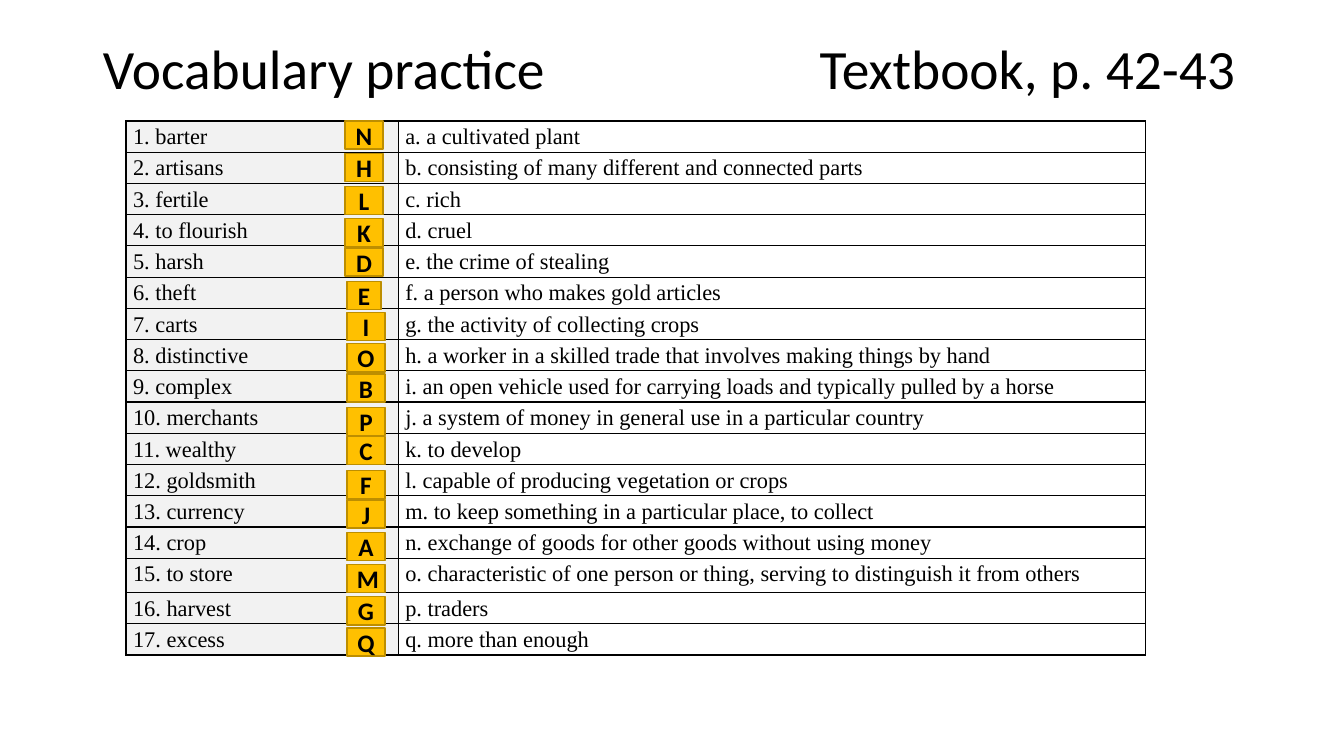
"""Build the vocabulary practice slide with its matching table and answer badges."""
from lxml.etree import SubElement
from pptx import Presentation
from pptx.dml.color import RGBColor
from pptx.enum.shapes import MSO_SHAPE as Shape
from pptx.enum.text import MSO_ANCHOR as Anchor, MSO_AUTO_SIZE as AutoSize, PP_ALIGN as Align
from pptx.oxml.ns import qn
from pptx.util import Pt

TITLE = "Vocabulary practice\tTextbook, p. 42-43"
ROWS = [
    ("1. barter", "a. a cultivated plant"),
    ("2. artisans", "b. consisting of many different and connected parts"),
    ("3. fertile", "c. rich "),
    ("4. to flourish", "d. cruel "),
    ("5. harsh ", "e. the crime of stealing"),
    ("6. theft", "f. a person who makes gold articles"),
    ("7. carts", "g. the activity of collecting crops"),
    ("8. distinctive", "h. a worker in a skilled trade that involves making things by hand"),
    ("9. complex", "i. an open vehicle used for carrying loads and typically pulled by a horse"),
    ("10. merchants", "j. a system of money in general use in a particular country"),
    ("11. wealthy", "k. to develop"),
    ("12. goldsmith", "l. capable of producing vegetation or crops"),
    ("13. currency", "m. to keep something in a particular place, to collect"),
    ("14. crop", "n. exchange of goods for other goods without using money"),
    ("15. to store", "o. characteristic of one person or thing, serving to distinguish it from others"),
    ("16. harvest", "p. traders"),
    ("17. excess", "q. more than enough "),
]
ANSWERS = [
    ("N", 120), ("H", 152), ("L", 185), ("K", 217), ("D", 246), ("E", 279),
    ("I", 310), ("O", 341), ("B", 371), ("P", 404), ("C", 433), ("F", 467),
    ("J", 496), ("A", 528), ("M", 560), ("G", 592), ("Q", 623),
]

BLACK = RGBColor(0x00, 0x00, 0x00)
GREY = RGBColor(0xF2, 0xF2, 0xF2)
GOLD = RGBColor(0xFF, 0xC0, 0x00)
DARK_GOLD = RGBColor(0xBD, 0x8E, 0x00)

EMU_PER_PX = 9144
COLUMNS = (270, 741)
ROW_HEIGHT, TALL_HEIGHT, TALL_ROW = 31, 34, 14
BADGE_WIDTH, NARROW_WIDTH, BADGE_HEIGHT = 38, 34, 28
BADGE_LEFT, BADGE_LEFT_LOWER, UPPER_COUNT = 342, 344, 5


def px(*lengths):
    return [length * EMU_PER_PX for length in lengths]


def write(para, text, size, font, bold=False):
    span = para.add_run()
    span.text = text
    span.font.size = Pt(size)
    span.font.name = font
    span.font.bold = bold
    span.font.color.rgb = BLACK


def add_title(page):
    title = page.shapes.title
    title.left, title.top, title.width, title.height = px(92, 40, 1150, 61)
    frame = title.text_frame
    frame.auto_size = AutoSize.NONE
    frame.vertical_anchor = Anchor.MIDDLE
    para = frame.paragraphs[0]
    para.alignment = Align.LEFT
    para.line_spacing = 0.9
    stops = SubElement(para._p.get_or_add_pPr(), qn("a:tabLst"))
    SubElement(stops, qn("a:tab"), pos=str(px(711)[0]), algn="l")
    write(para, TITLE, 39.6, "Calibri")


def add_borders(cell):
    properties = cell._tc.get_or_add_tcPr()
    for side in ("lnL", "lnR", "lnT", "lnB"):
        line = SubElement(properties, qn(f"a:{side}"), w=str(Pt(1)))
        fill = SubElement(line, qn("a:solidFill"))
        SubElement(fill, qn("a:srgbClr"), val=str(BLACK))


def add_vocabulary(page):
    height = ROW_HEIGHT * (len(ROWS) - 1) + TALL_HEIGHT
    area = px(125, 120, sum(COLUMNS), height)
    table = page.shapes.add_table(len(ROWS), len(COLUMNS), *area).table
    table.first_row = table.horz_banding = False
    for column, width in zip(table.columns, px(*COLUMNS)):
        column.width = width
    for index, texts in enumerate(ROWS):
        table.rows[index].height = px(TALL_HEIGHT if index == TALL_ROW else ROW_HEIGHT)[0]
        for cell, text in zip(table.rows[index].cells, texts):
            cell.margin_left, cell.margin_right, cell.margin_top, cell.margin_bottom = px(7, 7, 0, 0)
            add_borders(cell)
            if text == texts[0]:
                cell.fill.solid()
                cell.fill.fore_color.rgb = GREY
            else:
                cell.fill.background()
            para = cell.text_frame.paragraphs[0]
            para.alignment = Align.JUSTIFY
            para.line_spacing = 1.15
            write(para, text, 16, "Times New Roman")


def add_badges(page):
    for index, (letter, top) in enumerate(ANSWERS):
        left = BADGE_LEFT if index < UPPER_COUNT else BADGE_LEFT_LOWER
        width = NARROW_WIDTH if letter == "E" else BADGE_WIDTH
        box = page.shapes.add_shape(Shape.RECTANGLE, *px(left, top, width, BADGE_HEIGHT))
        box.shadow.inherit = False
        box.fill.solid()
        box.fill.fore_color.rgb = GOLD
        box.line.color.rgb = DARK_GOLD
        box.line.width = Pt(1)
        box.text_frame.vertical_anchor = Anchor.MIDDLE
        para = box.text_frame.paragraphs[0]
        para.alignment = Align.CENTER
        write(para, letter, 18, "Calibri", bold=True)


def main():
    deck = Presentation()
    deck.slide_width, deck.slide_height = px(1333, 750)
    page = deck.slides.add_slide(deck.slide_layouts[5])
    add_title(page)
    add_vocabulary(page)
    add_badges(page)
    deck.save("out.pptx")


if __name__ == "__main__":
    main()
